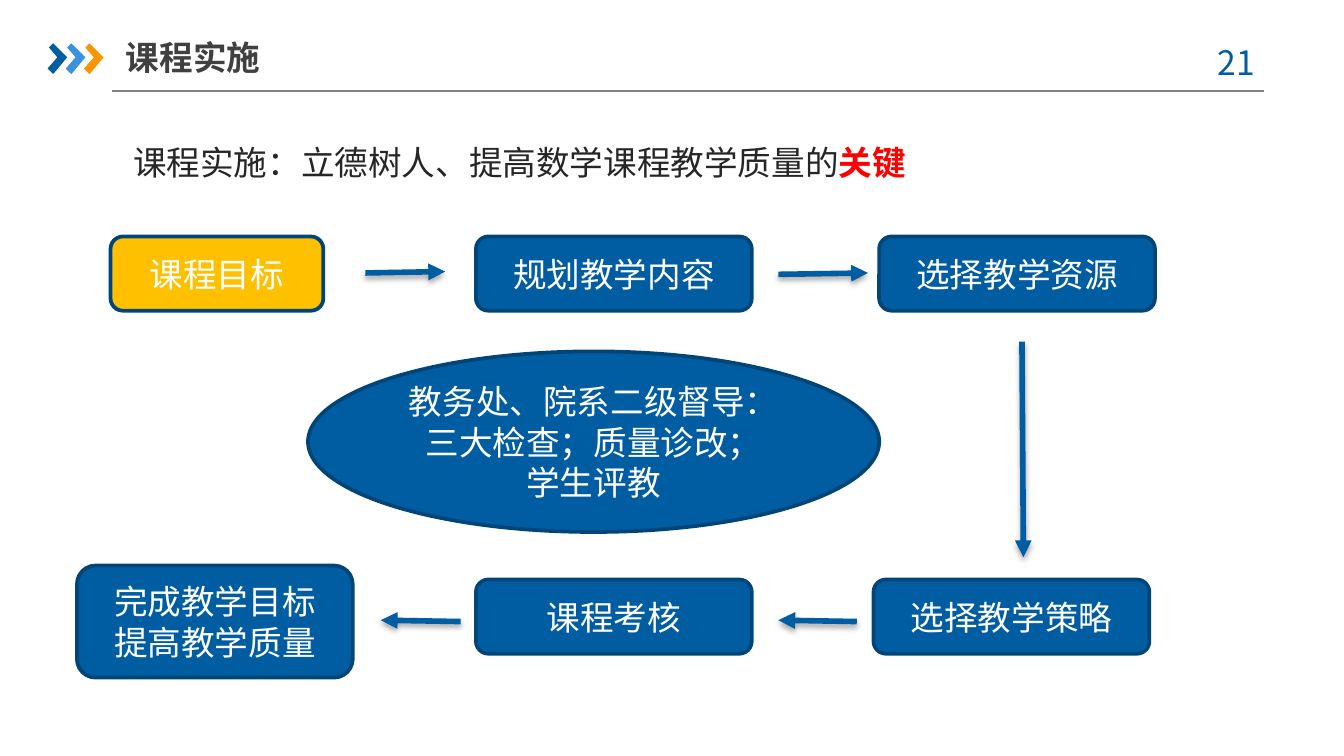
from lxml.etree import SubElement
from pptx import Presentation
from pptx.dml.color import RGBColor
from pptx.enum.shapes import MSO_CONNECTOR, MSO_SHAPE
from pptx.enum.text import MSO_ANCHOR, PP_ALIGN
from pptx.oxml.ns import qn
from pptx.util import Emu, Pt

PIXEL = 9525
FONT = "Noto Sans CJK SC"
BLUE, NAVY, GOLD, WHITE = "005DA2", "004578", "FFC000", "FFFFFF"
ROW_TOP, ROW_BOTTOM = 169, 414
STEP_WIDTH, STEP_HEIGHT = 197, 53


def px(*lengths):
    """Turn pixel lengths into a list of EMU lengths."""
    return [Emu(length * PIXEL) for length in lengths]


def color(value):
    """Turn a hex string into a colour."""
    return RGBColor.from_string(value)


def add_run(paragraph, text, ink, bold=False):
    """Add one run of 18 point text to a paragraph."""
    run = paragraph.add_run()
    run.text = text
    run.font.size = Pt(18)
    run.font.bold = bold
    run.font.name = FONT
    run.font.color.rgb = color(ink)
    SubElement(run.font._element, qn("a:ea"), typeface=FONT)


def add_text(slide, box, runs, align=PP_ALIGN.LEFT, anchor=MSO_ANCHOR.TOP,
             margins=(10, 5), line_spacing=None):
    """Add a one-paragraph text box made of runs."""
    frame = slide.shapes.add_textbox(*px(*box)).text_frame
    frame.word_wrap = True
    frame.vertical_anchor = anchor
    side, edge = px(*margins)
    frame.margin_left = frame.margin_right = side
    frame.margin_top = frame.margin_bottom = edge
    paragraph = frame.paragraphs[0]
    paragraph.alignment = align
    paragraph.line_spacing = line_spacing
    for run in runs:
        add_run(paragraph, *run)


def add_node(slide, box, lines, fill=BLUE, preset=MSO_SHAPE.ROUNDED_RECTANGLE):
    """Add an outlined flow node with centred white lines of text."""
    shape = slide.shapes.add_shape(preset, *px(*box))
    shape.shadow.inherit = False
    shape.fill.solid()
    shape.fill.fore_color.rgb = color(fill)
    shape.line.color.rgb = color(NAVY)
    shape.line.width = Pt(2)
    frame = shape.text_frame
    frame.word_wrap = True
    frame.vertical_anchor = MSO_ANCHOR.MIDDLE
    for index, line in enumerate(lines):
        paragraph = frame.add_paragraph() if index else frame.paragraphs[0]
        paragraph.alignment = PP_ALIGN.CENTER
        add_run(paragraph, line, WHITE)


def add_line(slide, ends, ink, width):
    """Add a straight line and return it with its empty effect list."""
    line = slide.shapes.add_connector(MSO_CONNECTOR.STRAIGHT, *px(*ends))
    line.line.color.rgb = color(ink)
    line.line.width = Pt(width)
    return line, SubElement(line._element.spPr, qn("a:effectLst"))


def add_arrow(slide, ends):
    """Add a thick blue arrow with a soft shadow below it."""
    arrow, effects = add_line(slide, ends, BLUE, 3)
    SubElement(arrow.line._get_or_add_ln(), qn("a:tailEnd"), type="triangle")
    shadow = SubElement(effects, qn("a:outerShdw"), blurRad=str(Pt(3.1)),
                        dist=str(Pt(1.8)), dir="5400000", rotWithShape="0")
    black = SubElement(shadow, qn("a:srgbClr"), val="000000")
    SubElement(black, qn("a:alpha"), val="35000")


def add_chevron(slide, left, fill):
    """Add one chevron of the heading mark."""
    points = [(1, 34), (4, 31), (14, 41), (4, 53), (0, 49), (7, 41)]
    outline = [(left + x, y) for x, y in points]
    builder = slide.shapes.build_freeform(*outline[0], scale=PIXEL)
    builder.add_line_segments(outline[1:])
    shape = builder.convert_to_shape()
    shape.shadow.inherit = False
    shape.fill.solid()
    shape.fill.fore_color.rgb = color(fill)
    shape.line.fill.background()


def add_header(slide):
    """Add the rule, chevrons, page number and title."""
    add_line(slide, (80, 65, 903, 65), "808080", 0.75)
    for index, fill in enumerate((BLUE, "3992DB", "F79600")):
        add_chevron(slide, 34 + 13 * index, fill)
    add_text(slide, (851, 25, 70, 38), [("21 ", BLUE)], PP_ALIGN.CENTER)
    add_text(slide, (90, 21, 420, 40), [("课程实施", "404040", True)],
             anchor=MSO_ANCHOR.MIDDLE, margins=(0, 5))


def add_flow(slide):
    """Add the teaching steps, the arrows between them and the oversight ellipse."""
    add_node(slide, (79, ROW_TOP, 152, STEP_HEIGHT), ["课程目标"], GOLD)
    steps = [
        (340, ROW_TOP, "规划教学内容"),
        (628, ROW_TOP, "选择教学资源"),
        (624, ROW_BOTTOM, "选择教学策略"),
        (340, ROW_BOTTOM, "课程考核"),
    ]
    for left, top, label in steps:
        add_node(slide, (left, top, STEP_WIDTH, STEP_HEIGHT), [label])
    add_node(slide, (55, 404, STEP_WIDTH, 80), ["完成教学目标", "提高教学质量"])
    arrows = [
        (261, 195, 318, 194),
        (556, 196, 620, 195),
        (730, 244, 731, 398),
        (612, 444, 556, 443),
        (329, 444, 272, 443),
    ]
    for ends in arrows:
        add_arrow(slide, ends)
    add_node(slide, (220, 251, 408, 129),
             ["教务处、院系二级督导：三大检查；质量诊改；", "学生评教"],
             preset=MSO_SHAPE.OVAL)


def main():
    """Build the slide and save it."""
    presentation = Presentation()
    presentation.slide_width, presentation.slide_height = px(960, 540)
    slide = presentation.slides.add_slide(presentation.slide_layouts[6])
    add_header(slide)
    add_text(slide, (87, 83, 791, 46),
             [("课程实施：立德树人、提高数学课程教学质量的", "262626"),
              ("关键", "FF0000", True)],
             PP_ALIGN.JUSTIFY, margins=(8, 4), line_spacing=1.5)
    add_flow(slide)
    presentation.save("out.pptx")


if __name__ == "__main__":
    main()
